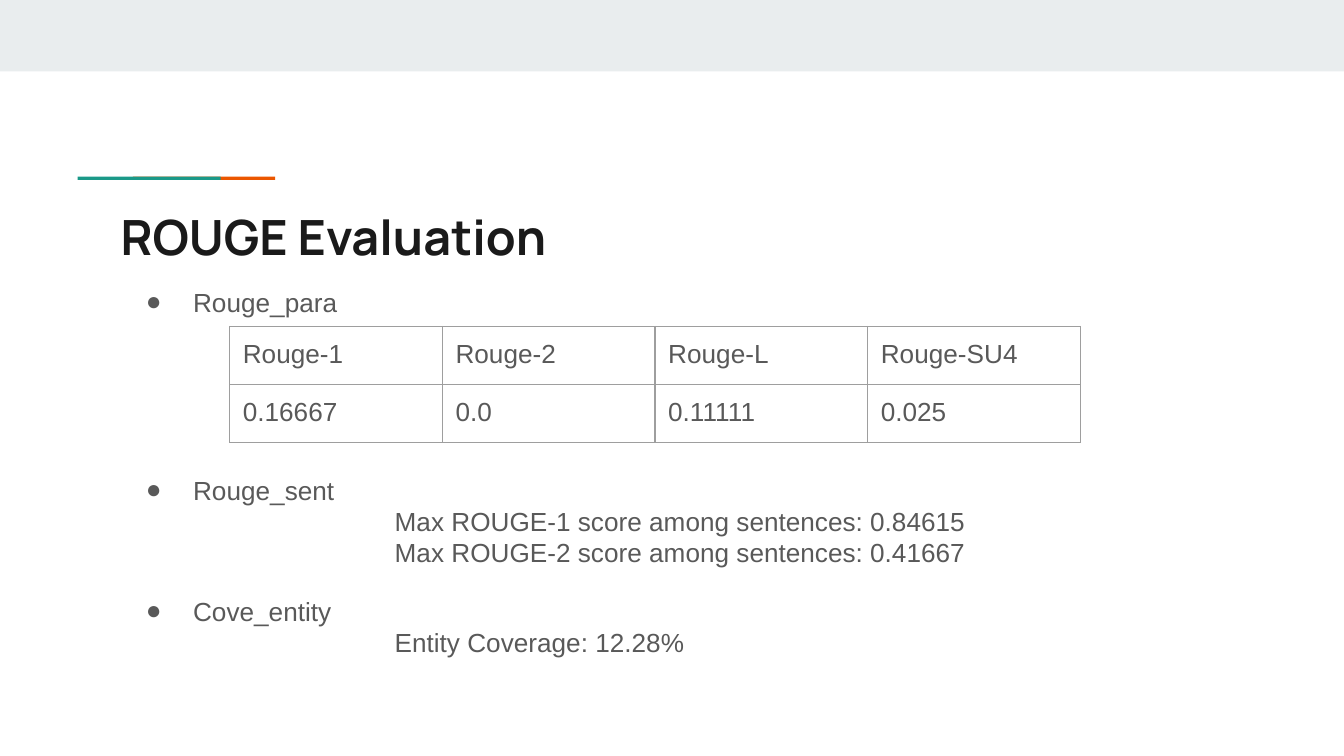
from lxml import etree
from pptx import Presentation
from pptx import util as u
from pptx.dml.color import RGBColor
from pptx.enum import shapes
from pptx.oxml.ns import qn

BAND = RGBColor(0xE9, 0xED, 0xEE)
ORANGE = RGBColor(0xEB, 0x56, 0x00)
TEAL = RGBColor(0x1A, 0x99, 0x88)
INK = RGBColor(0x1A, 0x1A, 0x1A)
GREY = RGBColor(0x59, 0x59, 0x59)
RULE = RGBColor(0x9E, 0x9E, 0x9E)

INSET = u.Cm(0.25)
BULLET_INDENT = u.Cm(1.27)
BULLET_HANG = u.Cm(-0.89)
DETAIL_INDENT = u.Cm(5.08)

SCORES = [
    ["Rouge-1", "Rouge-2", "Rouge-L", "Rouge-SU4"],
    ["0.16667", "0.0", "0.11111", "0.025"],
]


def set_insets(holder):
    holder.margin_left = holder.margin_right = INSET
    holder.margin_top = holder.margin_bottom = INSET


def write(para, words, size=14, font="Arial", color=GREY, bold=False):
    span = para.add_run()
    span.text = words
    span.font.size = u.Pt(size)
    span.font.name = font
    span.font.color.rgb = color
    span.font.bold = bold


def indent(para, left, first=0):
    properties = para._p.get_or_add_pPr()
    properties.set("marL", str(int(left)))
    properties.set("indent", str(int(first)))
    return properties


def add_bullet(para):
    properties = indent(para, BULLET_INDENT, BULLET_HANG)
    color = etree.SubElement(properties, qn("a:buClr"))
    etree.SubElement(color, qn("a:srgbClr"), val=str(GREY))
    etree.SubElement(properties, qn("a:buFont"), typeface="Arial")
    etree.SubElement(properties, qn("a:buChar"), char="●")


def add_bar(page, left, top, width, height, color):
    bar = page.shapes.add_shape(
        shapes.MSO_SHAPE.RECTANGLE, u.Cm(left), u.Cm(top), u.Cm(width), u.Cm(height)
    )
    bar.shadow.inherit = False
    bar.fill.solid()
    bar.fill.fore_color.rgb = color
    bar.line.fill.background()


def add_frame(page, left, top, width, height):
    box = page.shapes.add_textbox(u.Cm(left), u.Cm(top), u.Cm(width), u.Cm(height))
    frame = box.text_frame
    frame.word_wrap = True
    set_insets(frame)
    return frame


def add_section(page, top, width, heading, details=()):
    frame = add_frame(page, 2.13, top, width, 1)
    para = frame.paragraphs[0]
    add_bullet(para)
    write(para, heading)
    for detail in details:
        para = frame.add_paragraph()
        indent(para, DETAIL_INDENT)
        write(para, detail)


def add_borders(cell):
    properties = cell._tc.get_or_add_tcPr()
    for position, side in enumerate(("a:lnL", "a:lnR", "a:lnT", "a:lnB")):
        line = etree.Element(qn(side), w=str(int(u.Pt(0.75))))
        fill = etree.SubElement(line, qn("a:solidFill"))
        etree.SubElement(fill, qn("a:srgbClr"), val=str(RULE))
        properties.insert(position, line)


def add_score_table(page, left, top, column_width, row_height):
    rows, columns = len(SCORES), len(SCORES[0])
    table = page.shapes.add_table(
        rows, columns, u.Cm(left), u.Cm(top),
        u.Cm(column_width * columns), u.Cm(row_height * rows),
    ).table
    table.first_row = table.horz_banding = False
    for row, values in enumerate(SCORES):
        table.rows[row].height = u.Cm(row_height)
        for column, value in enumerate(values):
            table.columns[column].width = u.Cm(column_width)
            cell = table.cell(row, column)
            cell.fill.background()
            set_insets(cell)
            add_borders(cell)
            write(cell.text_frame.paragraphs[0], value)


def main():
    deck = Presentation()
    deck.slide_width, deck.slide_height = u.Cm(25.4), u.Cm(14.29)
    page = deck.slides.add_slide(deck.slide_layouts[6])

    add_bar(page, 0, 0, 25.4, 1.35, BAND)
    add_bar(page, 2.51, 3.34, 2.69, 0.06, ORANGE)
    add_bar(page, 1.47, 3.34, 2.7, 0.06, TEAL)

    title = add_frame(page, 2.03, 3.66, 21.36, 1.5)
    write(title.paragraphs[0], "ROUGE Evaluation",
          size=26, font="Manrope", color=INK, bold=True)

    add_score_table(page, 4.34, 6.17, 4.02, 1.06)
    add_section(page, 5.16, 22.1, "Rouge_para")
    add_section(page, 8.71, 18.57, "Rouge_sent", [
        "Max ROUGE-1 score among sentences: 0.84615",
        "Max ROUGE-2 score among sentences: 0.41667",
    ])
    add_section(page, 11, 18.29, "Cove_entity", ["Entity Coverage: 12.28%"])

    deck.save("out.pptx")


if __name__ == "__main__":
    main()
